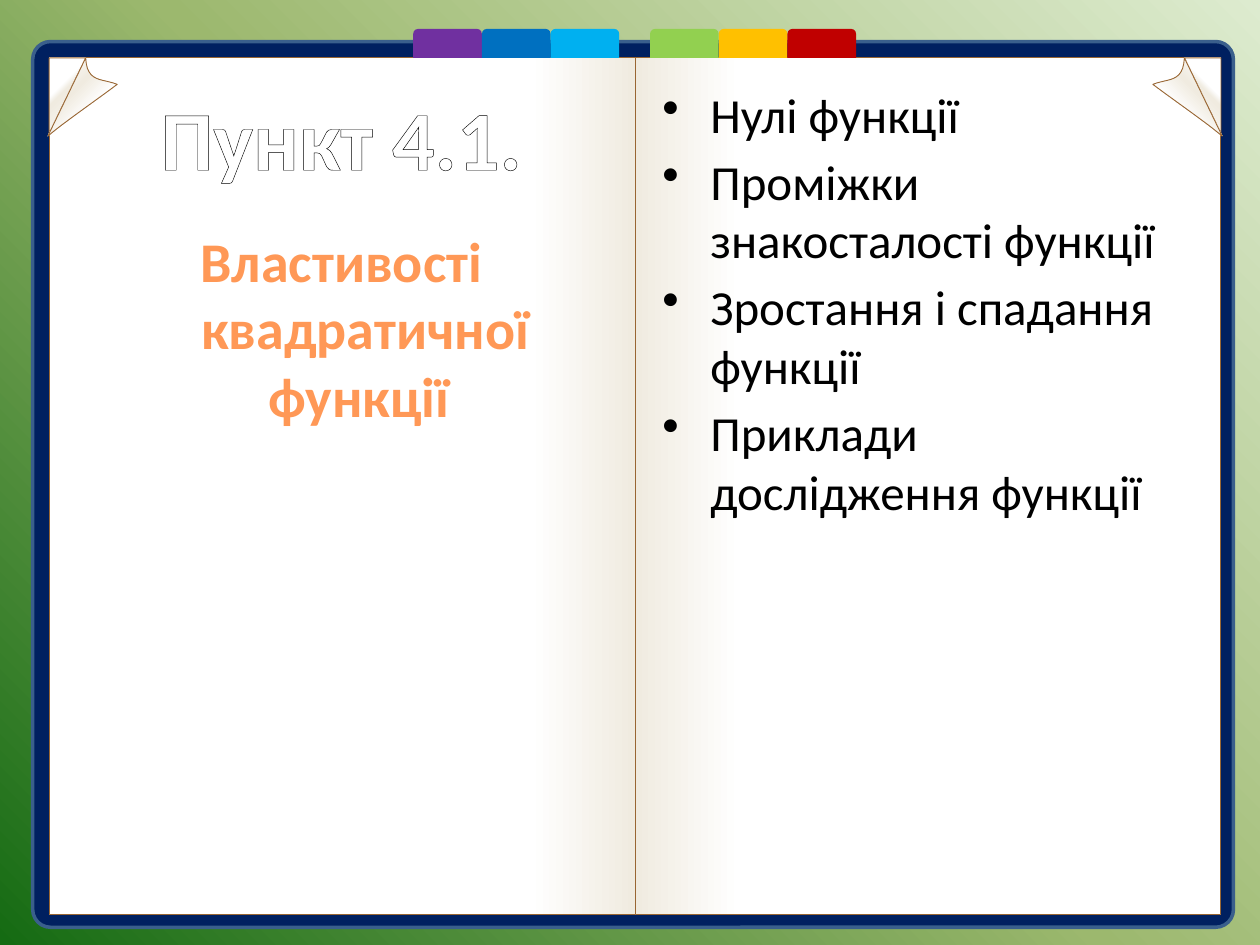
from lxml import etree
from pptx import Presentation
from pptx.dml.color import RGBColor
from pptx.enum.shapes import MSO_SHAPE
from pptx.enum.text import MSO_ANCHOR, PP_ALIGN
from pptx.oxml.ns import qn
from pptx.util import Inches, Pt

ROUNDED = MSO_SHAPE.ROUNDED_RECTANGLE
RECTANGLE = MSO_SHAPE.RECTANGLE
TAB = MSO_SHAPE.ROUND_2_SAME_RECTANGLE
CENTER, LEFT = PP_ALIGN.CENTER, PP_ALIGN.LEFT
TOP, MIDDLE = MSO_ANCHOR.TOP, MSO_ANCHOR.MIDDLE

WHITE = RGBColor(0xFF, 0xFF, 0xFF)
BLACK = RGBColor(0x00, 0x00, 0x00)
NAVY = RGBColor(0x00, 0x20, 0x60)
STEEL = RGBColor(0x3A, 0x5F, 0x8C)
BROWN = RGBColor(0x99, 0x66, 0x33)
PAPER = RGBColor(0xF0, 0xEB, 0xE0)
PALE_GREEN = RGBColor(0xDD, 0xEB, 0xCF)
LEAF = RGBColor(0x9C, 0xB8, 0x6E)
FOREST = RGBColor(0x15, 0x6B, 0x13)
RUST = RGBColor(0x9D, 0x47, 0x00)
ORANGE = RGBColor(0xFF, 0x98, 0x56)
CREAM = RGBColor(0xFF, 0xF5, 0xF1)
PURPLE = RGBColor(0x70, 0x30, 0xA0)
BLUE = RGBColor(0x00, 0x70, 0xC0)
SKY = RGBColor(0x00, 0xB0, 0xF0)
LIME = RGBColor(0x92, 0xD0, 0x50)
AMBER = RGBColor(0xFF, 0xC0, 0x00)
RED = RGBColor(0xC0, 0x00, 0x00)

MEADOW = [(0, PALE_GREEN), (50, LEAF), (100, FOREST)]
PAGE_SHADE = [(0, WHITE), (82, WHITE), (100, PAPER)]
CORNER_SHADE = [(0, WHITE), (57, PAPER), (65, WHITE)]
CURL_SHADE = [(12, WHITE), (40, PAPER), (65, WHITE)]
TEXT_SHADE = [(0, RUST), (78, ORANGE), (100, CREAM)]

COLUMNS, ROWS = 100, 75
SPINE, PAGE_TOP, PAGE_WIDTH, PAGE_HEIGHT = 50.4, 4.6, 46.5, 68
TAB_WIDTH, TAB_HEIGHT = 5.45, 2.3

TOPICS = [
    "Нулі функції",
    "Проміжки знакосталості функції",
    "Зростання і спадання функції",
    "Приклади дослідження функції",
]


def curve(start, control_1, control_2, end, steps=12):
    """Points along a cubic Bezier curve, both ends included."""
    points = []
    for step in range(steps + 1):
        t = step / steps
        weights = (1 - t) ** 3, 3 * t * (1 - t) ** 2, 3 * t ** 2 * (1 - t), t ** 3
        points.append(tuple(
            sum(weight * value for weight, value in zip(weights, axis))
            for axis in zip(start, control_1, control_2, end)
        ))
    return points


def mirror(points):
    return [(2 * SPINE - column, row) for column, row in points]


class BookSlide:
    """Style and current slide; lengths are columns and rows of the grid."""

    font_name = "Calibri"
    hanging = Inches(0.38)
    paragraph_gap = Pt(4.5)

    def __init__(self, deck):
        self.slide = deck.slides.add_slide(deck.slide_layouts[6])
        self.shapes = self.slide.shapes
        self.column = deck.slide_width / COLUMNS
        self.row = deck.slide_height / ROWS

    def place(self, column, row):
        return round(column * self.column), round(row * self.row)

    def shade(self, fill, owner, stops, angle):
        """Fill with gradient stops; the angle turns clockwise."""
        fill.gradient()
        fill.gradient_angle = -angle % 360
        stop_list = next(owner.iter(qn("a:gsLst")))
        for stop in list(stop_list):
            stop_list.remove(stop)
        for percent, color in stops:
            stop = etree.SubElement(stop_list, qn("a:gs"), pos=str(percent * 1000))
            etree.SubElement(stop, qn("a:srgbClr"), val=str(color))

    def background(self, stops, angle):
        self.shade(self.slide.background.fill, self.slide.element, stops, angle)

    def paint(self, shape, fill, angle=0, line=None, line_width=0.5):
        shape.shadow.inherit = False
        if isinstance(fill, RGBColor):
            shape.fill.solid()
            shape.fill.fore_color.rgb = fill
        else:
            self.shade(shape.fill, shape.element, fill, angle)
        if line is None:
            shape.line.fill.background()
        else:
            shape.line.color.rgb = line
            shape.line.width = Pt(line_width)

    def block(self, kind, column, row, width, height, fill, **paint):
        shape = self.shapes.add_shape(
            kind, *self.place(column, row), *self.place(width, height))
        self.paint(shape, fill, **paint)
        return shape

    def outline(self, points, fill, angle):
        start, *rest = [self.place(*point) for point in points]
        builder = self.shapes.build_freeform(*start)
        builder.add_line_segments(rest, close=True)
        self.paint(builder.convert_to_shape(), fill, angle, BROWN)

    def both_sides(self, points, fill, angle):
        """Draw the right-hand outline and its reflection across the spine."""
        self.outline(points, fill, angle)
        self.outline(mirror(points), fill, (180 - angle) % 360)

    def text(self, column, row, width, height, lines, size, color=BLACK,
             bold=False, align=LEFT, anchor=TOP, hang=False, bullet=None):
        box = self.shapes.add_textbox(
            *self.place(column, row), *self.place(width, height))
        frame = box.text_frame
        frame.word_wrap = True
        frame.vertical_anchor = anchor
        frame.text = "\n".join(lines)
        for index, paragraph in enumerate(frame.paragraphs):
            paragraph.alignment = align
            properties = paragraph._p.get_or_add_pPr()
            if hang:
                properties.set("marL", str(self.hanging))
                properties.set("indent", str(-self.hanging))
            if bullet:
                etree.SubElement(properties, qn("a:buChar"), char=bullet)
            if index:
                paragraph.space_before = self.paragraph_gap
            for run in paragraph.runs:
                run.font.name = self.font_name
                run.font.size = Pt(size)
                run.font.bold = bold
                if isinstance(color, RGBColor):
                    run.font.color.rgb = color
                else:
                    self.shade(run.font.fill, run._r, color, 90)
        return box

    def outline_letters(self, box, color, width):
        for properties in box.element.iter(qn("a:rPr")):
            line = etree.Element(qn("a:ln"), w=str(Pt(width)))
            solid = etree.SubElement(line, qn("a:solidFill"))
            etree.SubElement(solid, qn("a:srgbClr"), val=str(color))
            properties.insert(0, line)


def main():
    deck = Presentation()
    deck.slide_width, deck.slide_height = Inches(10), Inches(7.5)
    book = BookSlide(deck)
    book.background(MEADOW, 135)

    cover = book.block(ROUNDED, 2.6, 3.3, 95.3, 70.3, NAVY, line=STEEL, line_width=2)
    cover.adjustments[0] = 0.02
    for left, angle in ((SPINE - PAGE_WIDTH, 0), (SPINE, 180)):
        book.block(RECTANGLE, left, PAGE_TOP, PAGE_WIDTH, PAGE_HEIGHT,
                   PAGE_SHADE, angle=angle, line=BROWN)

    edge = SPINE + PAGE_WIDTH
    fold = (94, PAGE_TOP)
    book.both_sides([fold, (edge, 10.6), (edge, PAGE_TOP)], CORNER_SHADE, 315)

    title = book.text(5, 6.2, 44.2, 9.3, ["Пункт 4.1."], 48, WHITE,
                      bold=True, align=CENTER, anchor=MIDDLE)
    book.outline_letters(title, BLACK, 0.75)
    book.text(51.6, 6.2, 43.4, 64.1, TOPICS, 28, hang=True, bullet="•")

    for first, colors in ((32.8, (PURPLE, BLUE, SKY)), (51.6, (LIME, AMBER, RED))):
        for index, color in enumerate(colors):
            book.block(TAB, first + index * TAB_WIDTH, PAGE_TOP - TAB_HEIGHT,
                       TAB_WIDTH, TAB_HEIGHT, color)

    book.text(5, 17.5, 44.2, 52.8, ["Властивості квадратичної функції "], 32,
              TEXT_SHADE, bold=True, align=CENTER, hang=True)

    tip = (91.5, 6.7)
    curl = (curve(tip, (93.5, 8.2), (95.7, 9.7), (97, 10.8))
            + curve(fold, (93.9, 6.6), (92.7, 6.2), tip))
    book.both_sides(curl, CURL_SHADE, 135)

    deck.save("out.pptx")


if __name__ == "__main__":
    main()
